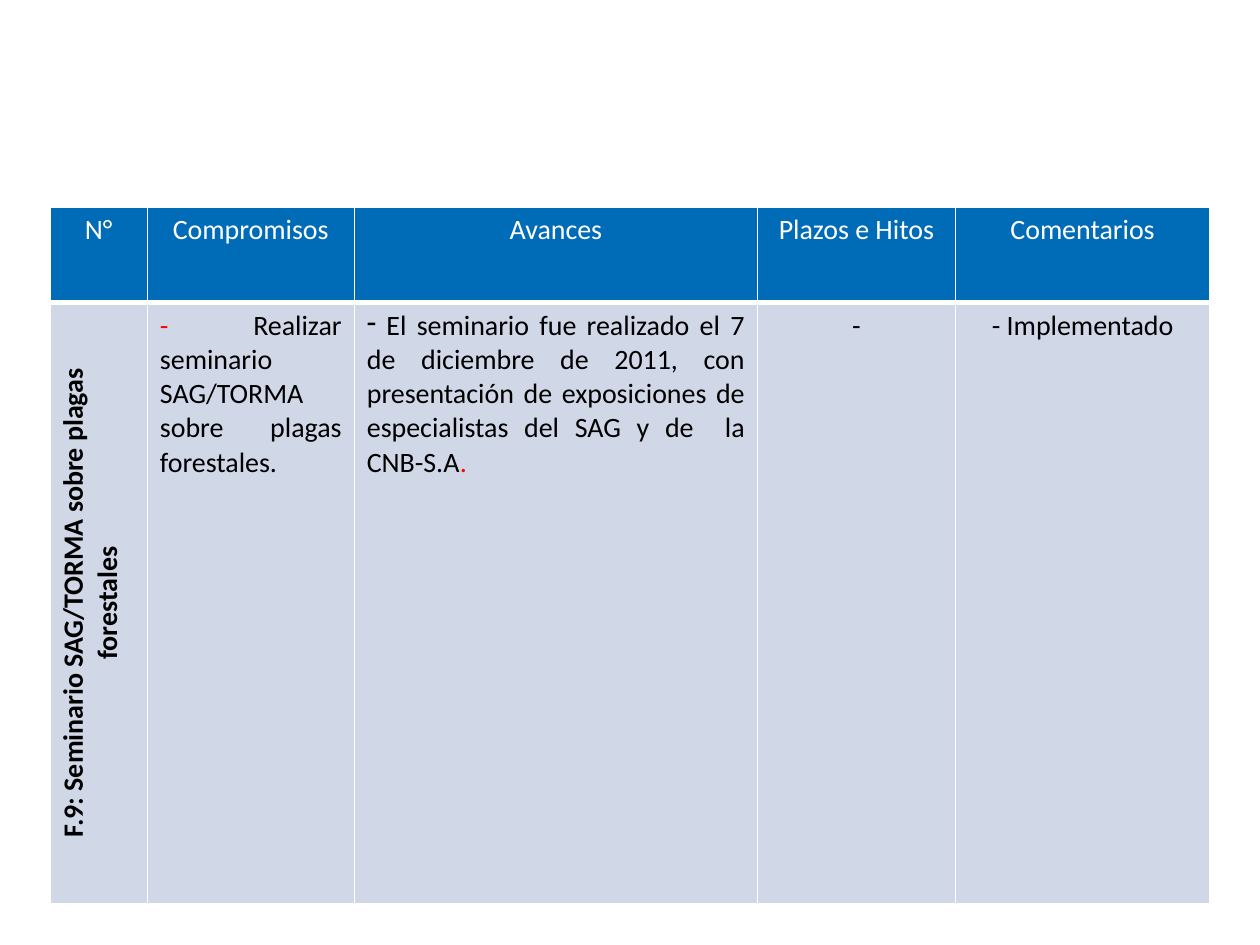
from dataclasses import dataclass

from lxml import etree
from pptx import Presentation
from pptx.dml.color import RGBColor
from pptx.enum.text import PP_ALIGN
from pptx.oxml.ns import qn
from pptx.util import Pt

CENTER = PP_ALIGN.CENTER
JUSTIFY = PP_ALIGN.JUSTIFY
WHITE, BLACK, RED = "FFFFFF", "000000", "FF0000"
HEADER_BLUE, BODY_BLUE = "006CB7", "D0D8E8"
COLUMN_WIDTHS = (55.75, 118.25, 230.5, 113, 145.5)
ROW_HEIGHTS = (54.5, 238)
HEADINGS = ("N°", "Compromisos", "Avances", "Plazos e Hitos", "Comentarios")


@dataclass(frozen=True)
class Span:
    text: str
    color: str = BLACK
    bold: bool = False


@dataclass(frozen=True)
class CellText:
    spans: tuple[Span, ...]
    align: PP_ALIGN = CENTER
    bullet: str = ""
    vertical: bool = False


HEADER = [CellText((Span(heading, WHITE),)) for heading in HEADINGS]
BODY = [
    CellText((Span("F.9: Seminario SAG/TORMA sobre plagas forestales", bold=True),),
             vertical=True),
    CellText((Span("- ", RED),
              Span("Realizar seminario SAG/TORMA sobre plagas forestales.")), JUSTIFY),
    CellText((Span(" El seminario fue realizado el 7 de diciembre de 2011, con "
                   "presentación de exposiciones de especialistas del SAG y de  la CNB-S.A"),
              Span(".", RED)), JUSTIFY, bullet="-"),
    CellText((Span("-"),)),
    CellText((Span("- Implementado"),)),
]


def rgb(color: str) -> RGBColor:
    return RGBColor.from_string(color)


def add_borders(cell, bottom: float) -> None:
    properties = cell._tc.get_or_add_tcPr()
    for side, width in (("L", 1), ("R", 1), ("T", 1), ("B", bottom)):
        line = etree.SubElement(properties, qn(f"a:ln{side}"), w=str(Pt(width)))
        fill = etree.SubElement(line, qn("a:solidFill"))
        etree.SubElement(fill, qn("a:srgbClr"), val=WHITE)


def fill_cell(cell, content: CellText, color: str, bottom: float) -> None:
    add_borders(cell, bottom)
    cell.fill.solid()
    cell.fill.fore_color.rgb = rgb(color)
    if content.vertical:
        cell._tc.get_or_add_tcPr().set("vert", "vert270")
    para = cell.text_frame.paragraphs[0]
    para.alignment = content.align
    if content.bullet:
        etree.SubElement(para._p.get_or_add_pPr(), qn("a:buChar"), char=content.bullet)
    for span in content.spans:
        run = para.add_run()
        run.text = span.text
        run.font.name = "Calibri"
        run.font.size = Pt(16)
        run.font.bold = span.bold
        run.font.color.rgb = rgb(span.color)


def main() -> None:
    deck = Presentation()
    deck.slide_width, deck.slide_height = Pt(720), Pt(540)
    page = deck.slides.add_slide(deck.slide_layouts[6])
    table = page.shapes.add_table(
        len(ROW_HEIGHTS), len(COLUMN_WIDTHS), Pt(28.5), Pt(118.25),
        Pt(sum(COLUMN_WIDTHS)), Pt(sum(ROW_HEIGHTS))).table
    for column, width in zip(table.columns, COLUMN_WIDTHS):
        column.width = Pt(width)
    for row, height in zip(table.rows, ROW_HEIGHTS):
        row.height = Pt(height)
    for row, contents, color, bottom in zip(
            table.rows, (HEADER, BODY), (HEADER_BLUE, BODY_BLUE), (3, 1)):
        for cell, content in zip(row.cells, contents):
            fill_cell(cell, content, color, bottom)
    deck.save("out.pptx")


if __name__ == "__main__":
    main()
